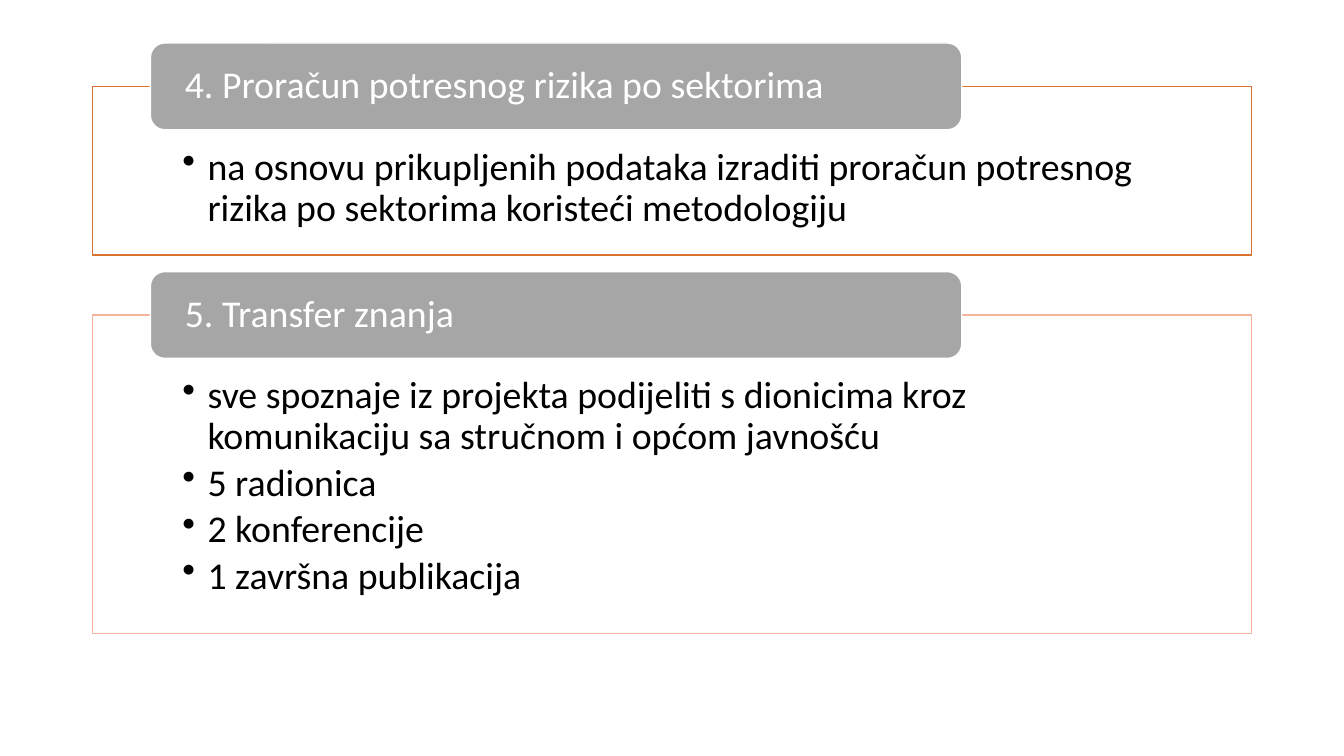
from lxml import etree
from pptx import Presentation
from pptx.dml.color import RGBColor
from pptx.enum.shapes import MSO_SHAPE
from pptx.enum.text import MSO_ANCHOR, PP_ALIGN
from pptx.oxml.ns import qn
from pptx.util import Pt

RECTANGLE = MSO_SHAPE.RECTANGLE
ROUNDED_RECTANGLE = MSO_SHAPE.ROUNDED_RECTANGLE
TOP = MSO_ANCHOR.TOP
MIDDLE = MSO_ANCHOR.MIDDLE
LEFT = PP_ALIGN.LEFT

WHITE = RGBColor(0xFF, 0xFF, 0xFF)
BLACK = RGBColor(0x00, 0x00, 0x00)
GRAY = RGBColor(0xA6, 0xA6, 0xA6)
ORANGE = RGBColor(0xD7, 0x71, 0x2C)
SALMON = RGBColor(0xF3, 0xB3, 0x9B)

FRAME_LEFT, FRAME_WIDTH = 66, 828
HEADER_LEFT, HEADER_WIDTH, HEADER_HEIGHT = 107.4, 579.6, 62
BULLET_INDENT = 18

# Frame top, frame height, outline colour, heading, bullet points
SECTIONS = [
    (61.7, 120.5, ORANGE, "4. Proračun potresnog rizika po sektorima", [
        "na osnovu prikupljenih podataka izraditi proračun potresnog "
        "rizika po sektorima koristeći metodologiju",
    ]),
    (225, 227.4, SALMON, "5. Transfer znanja", [
        "sve spoznaje iz projekta podijeliti s dionicima kroz "
        "komunikaciju sa stručnom i općom javnošću",
        "5 radionica",
        "2 konferencije",
        "1 završna publikacija",
    ]),
]


def add_box(kind, left, top, width, height, line_color, anchor, margins):
    shape = slide.shapes.add_shape(kind, Pt(left), Pt(top), Pt(width), Pt(height))
    shape.shadow.inherit = False
    shape.line.color.rgb = line_color
    shape.line.width = Pt(1)
    frame = shape.text_frame
    frame.word_wrap = True
    frame.vertical_anchor = anchor
    side, frame.margin_top, frame.margin_bottom = [Pt(margin) for margin in margins]
    frame.margin_left = frame.margin_right = side
    return shape


def write_paragraph(paragraph, text, color):
    paragraph.alignment = LEFT
    paragraph.line_spacing = 0.9
    run = paragraph.add_run()
    run.text = text
    run.font.name = "Calibri"
    run.font.size = Pt(27)
    run.font.color.rgb = color


presentation = Presentation()
presentation.slide_width = Pt(960)
presentation.slide_height = Pt(540)
slide = presentation.slides.add_slide(presentation.slide_layouts[6])

for top, height, outline, heading, points in SECTIONS:
    body = add_box(RECTANGLE, FRAME_LEFT, top, FRAME_WIDTH, height,
                   outline, TOP, (64.3, 43.7, 15))
    body.fill.background()
    for index, point in enumerate(points):
        frame = body.text_frame
        paragraph = frame.add_paragraph() if index else frame.paragraphs[0]
        properties = paragraph._p.get_or_add_pPr()
        properties.set("marL", str(Pt(BULLET_INDENT)))
        properties.set("indent", str(-Pt(BULLET_INDENT)))
        etree.SubElement(properties, qn("a:buChar"), char="•")
        paragraph.space_after = Pt(4)
        write_paragraph(paragraph, point, BLACK)

    # The heading straddles the top edge of its frame
    header = add_box(ROUNDED_RECTANGLE, HEADER_LEFT, top - HEADER_HEIGHT / 2,
                     HEADER_WIDTH, HEADER_HEIGHT, WHITE, MIDDLE, (21.6, 0, 0))
    header.fill.solid()
    header.fill.fore_color.rgb = GRAY
    write_paragraph(header.text_frame.paragraphs[0], heading, WHITE)

presentation.save("out.pptx")
